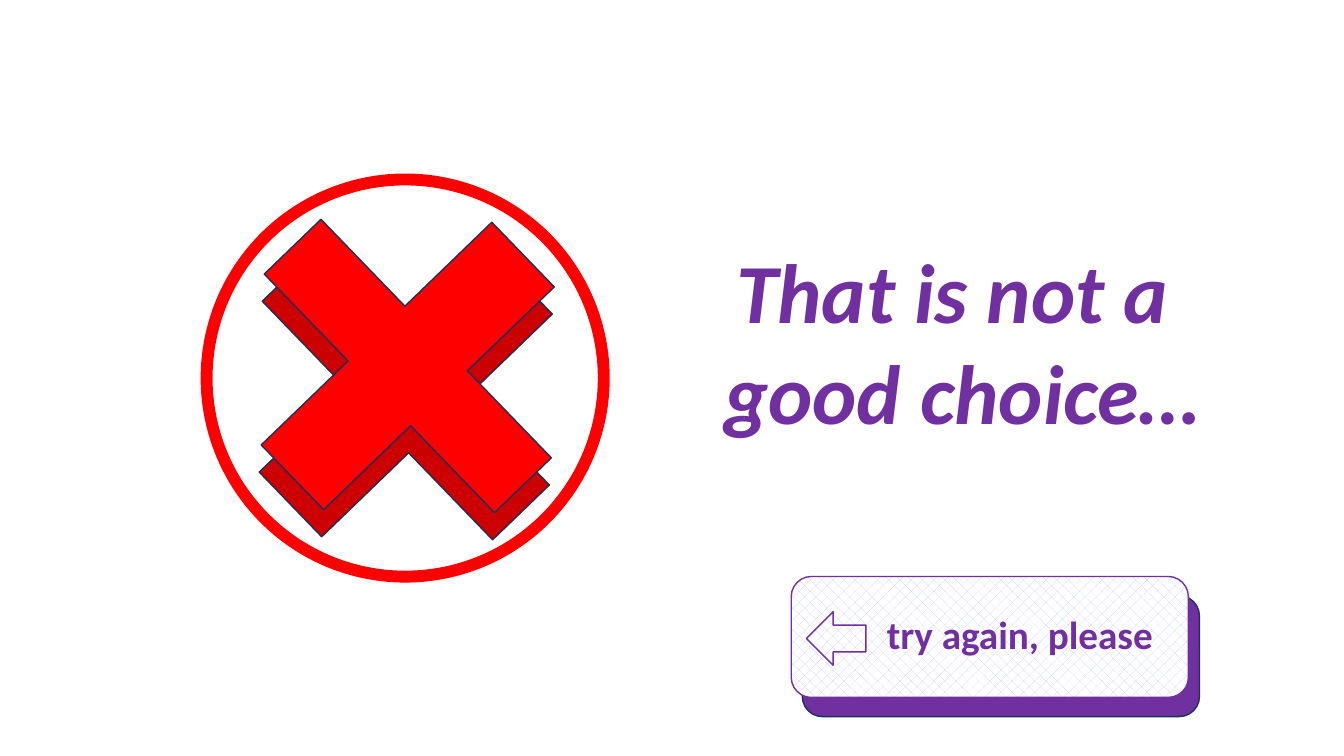
"""Build the wrong-answer feedback slide with its try-again button."""
from dataclasses import dataclass
from typing import Optional

from pptx import Presentation
from pptx.dml.color import RGBColor
from pptx.enum.dml import MSO_PATTERN
from pptx.enum.shapes import MSO_SHAPE
from pptx.enum.text import MSO_ANCHOR, MSO_AUTO_SIZE, PP_ALIGN
from pptx.shapes.autoshape import Shape
from pptx.slide import Slide
from pptx.util import Pt


@dataclass(frozen=True)
class Theme:
    font: str = "Calibri"
    purple: RGBColor = RGBColor(0x70, 0x30, 0xA0)
    lavender: RGBColor = RGBColor(0xCC, 0xCC, 0xFF)
    white: RGBColor = RGBColor(0xFF, 0xFF, 0xFF)
    red: RGBColor = RGBColor(0xFF, 0x00, 0x00)
    dark_red: RGBColor = RGBColor(0xCC, 0x00, 0x00)
    navy: RGBColor = RGBColor(0x1E, 0x32, 0x56)
    title_size: float = 60
    button_size: float = 28


@dataclass(frozen=True)
class Figure:
    kind: MSO_SHAPE
    left: float
    top: float
    width: float
    height: float
    line: RGBColor
    line_width: float = 1
    fill: Optional[RGBColor] = None
    rotation: float = 0
    adjustment: Optional[float] = None


THEME = Theme()


def cross(left: float, top: float, fill: RGBColor) -> Figure:
    return Figure(MSO_SHAPE.CROSS, left, top, 236.9, 229, THEME.navy,
                  fill=fill, rotation=46, adjustment=0.377)


def button(left: float, top: float, line: RGBColor, fill: RGBColor) -> Figure:
    return Figure(MSO_SHAPE.ROUNDED_RECTANGLE, left, top, 283.7, 86.4, line, fill=fill)


CROSS_MARK = (
    Figure(MSO_SHAPE.FLOWCHART_CONNECTOR, 147.6, 128.2, 283.7, 283.7, THEME.red, 8.5),
    cross(171.4, 166.3, THEME.dark_red),
    cross(172.8, 146.9, THEME.red),
)
BUTTON_SHADOW = button(573.1, 425.5, THEME.navy, THEME.purple)
BUTTON_FACE = button(565.2, 411.8, THEME.purple, THEME.white)
BACK_ARROW = Figure(MSO_SHAPE.LEFT_ARROW, 576, 437, 42.5, 38.2, THEME.purple)


def draw_figure(slide: Slide, figure: Figure) -> Shape:
    shape = slide.shapes.add_shape(figure.kind, Pt(figure.left), Pt(figure.top),
                                   Pt(figure.width), Pt(figure.height))
    shape.shadow.inherit = False
    shape.rotation = figure.rotation
    if figure.adjustment is not None:
        shape.adjustments[0] = figure.adjustment
    if figure.fill is None:
        shape.fill.background()
    else:
        shape.fill.solid()
        shape.fill.fore_color.rgb = figure.fill
    shape.line.color.rgb = figure.line
    shape.line.width = Pt(figure.line_width)
    return shape


def format_text(shape: Shape, size: float, italic: bool = False) -> None:
    for paragraph in shape.text_frame.paragraphs:
        paragraph.alignment = PP_ALIGN.CENTER
        for run in paragraph.runs:
            run.font.name = THEME.font
            run.font.size = Pt(size)
            run.font.bold = True
            run.font.italic = italic
            run.font.color.rgb = THEME.purple


def write_title(slide: Slide) -> None:
    title = slide.shapes.title
    title.left, title.top = Pt(508.3), Pt(167.8)
    title.width, title.height = Pt(357.1), Pt(152.6)
    text_frame = title.text_frame
    text_frame.text = "That is not a \ngood choice…"
    text_frame.word_wrap = False
    text_frame.auto_size = MSO_AUTO_SIZE.SHAPE_TO_FIT_TEXT
    text_frame.vertical_anchor = MSO_ANCHOR.TOP
    format_text(title, THEME.title_size, italic=True)


def draw_button(slide: Slide) -> None:
    draw_figure(slide, BUTTON_SHADOW)
    face = draw_figure(slide, BUTTON_FACE)
    face.fill.patterned()
    face.fill.pattern = MSO_PATTERN.PERCENT_25
    face.fill.fore_color.rgb = THEME.lavender
    face.fill.back_color.rgb = THEME.white
    text_frame = face.text_frame
    text_frame.text = "try again, please"
    text_frame.word_wrap = True
    text_frame.vertical_anchor = MSO_ANCHOR.MIDDLE
    text_frame.margin_left = Pt(50)
    paragraph = text_frame.paragraphs[0]
    paragraph.line_spacing = 0.9
    paragraph.space_before = Pt(10)
    format_text(face, THEME.button_size)
    draw_figure(slide, BACK_ARROW)


def main() -> None:
    presentation = Presentation()
    presentation.slide_width, presentation.slide_height = Pt(960), Pt(540)
    slide = presentation.slides.add_slide(presentation.slide_layouts[5])
    write_title(slide)
    for figure in CROSS_MARK:
        draw_figure(slide, figure)
    draw_button(slide)
    presentation.save("out.pptx")


if __name__ == "__main__":
    main()
